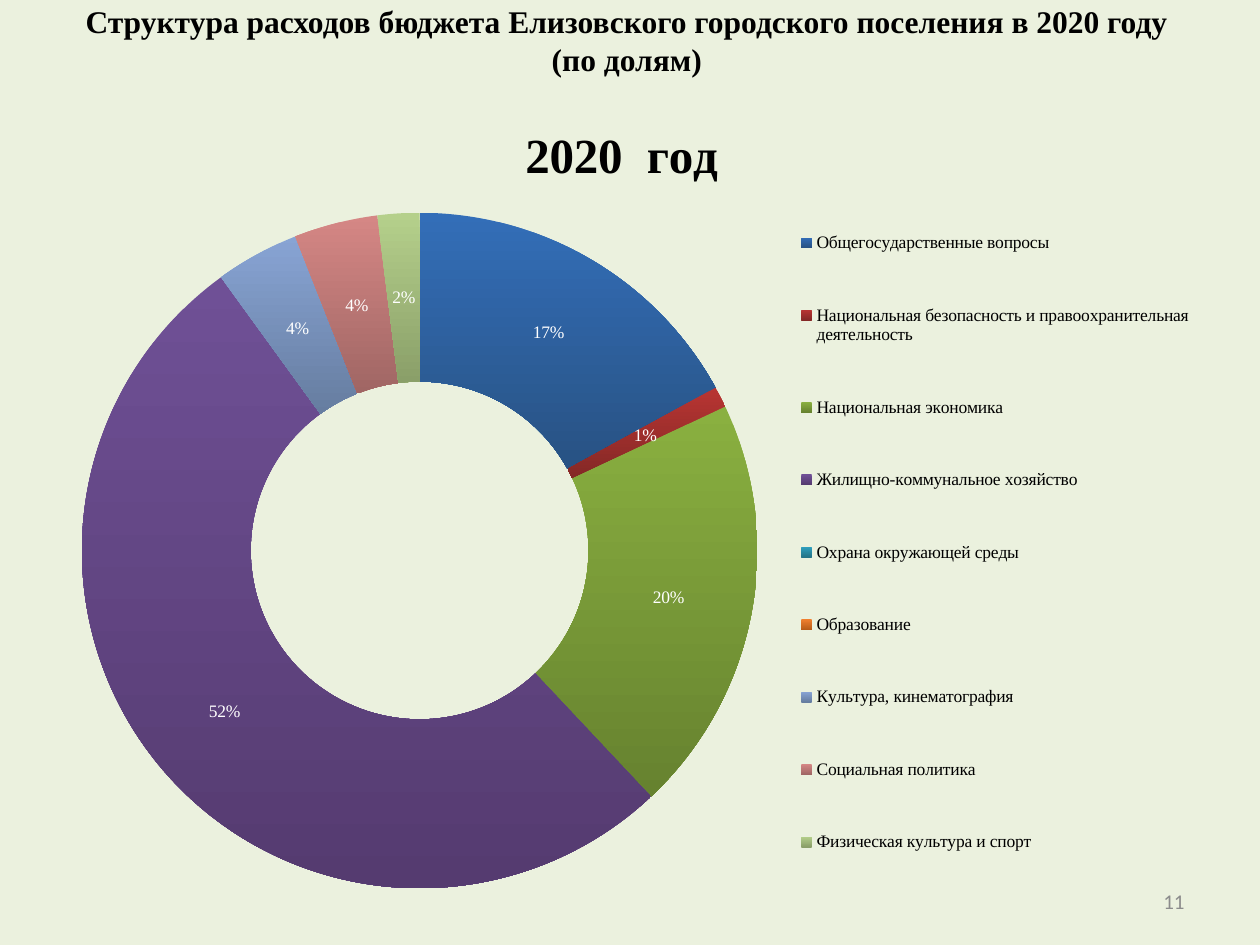
from lxml import etree
from pptx import Presentation
from pptx import util as u
from pptx.chart.data import CategoryChartData
from pptx.dml.color import RGBColor
from pptx.enum import chart as ch, text
from pptx.oxml import ns

BACKGROUND = RGBColor(0xEB, 0xF1, 0xDE)
BLACK = RGBColor(0, 0, 0)
WHITE = RGBColor(255, 255, 255)
GREY = RGBColor(0x8C, 0x8C, 0x8C)
SERIF, SANS = "Times New Roman", "Calibri"

SLIDE_W, SLIDE_H = u.Inches(10), u.Inches(7.5)
YEAR = "2020  год"
EDUCATION = 5  # its label is moved off the neighbouring one

# Budget section, percent of spending, top and bottom colour of its slice
SECTIONS = [
    ("Общегосударственные вопросы", 17, "336EB8", "285283"),
    ("Национальная безопасность и правоохранительная деятельность",
     1, "B83532", "842826"),
    ("Национальная экономика", 20, "8AB040", "66822F"),
    ("Жилищно-коммунальное хозяйство", 52, "6F5096", "553B70"),
    ("Охрана окружающей среды", 0, "2EA0BE", "247487"),
    ("Образование", 0, "F0802F", "B85C18"),
    ("Культура, кинематография", 4, "88A4D4", "667DA0"),
    ("Социальная политика", 4, "D58785", "A06664"),
    ("Физическая культура и спорт", 2, "B5D08B", "8A9F69"),
]


def format_font(font, size, color=BLACK, name=SERIF, bold=False):
    font.size, font.name, font.bold = u.Pt(size), name, bold
    font.color.rgb = color


def write_text(frame, content, align=text.PP_ALIGN.CENTER, **font_format):
    """Fill a text frame; a vertical tab in the content breaks the line."""
    frame.text = content
    frame.word_wrap = True
    frame.auto_size = text.MSO_AUTO_SIZE.NONE
    frame.vertical_anchor = text.MSO_ANCHOR.MIDDLE
    paragraph = frame.paragraphs[0]
    paragraph.alignment = align
    for run in paragraph.runs:
        format_font(run.font, **font_format)


def place_chart_part(part, position, mode="edge", **shares):
    """Lay out a chart part by shares of the chart's size."""
    for old in part.findall(ns.qn("c:layout")):
        part.remove(old)
    layout = etree.Element(ns.qn("c:layout"))
    manual = etree.SubElement(layout, ns.qn("c:manualLayout"))
    if part.tag == ns.qn("c:plotArea"):
        etree.SubElement(manual, ns.qn("c:layoutTarget"), val="inner")
    for axis in "xy":
        etree.SubElement(manual, ns.qn(f"c:{axis}Mode"), val=mode)
    for key, share in shares.items():
        etree.SubElement(manual, ns.qn(f"c:{key}"), val=str(share))
    part.insert(position, layout)


def color_slices(series):
    for index, (_, _, top, bottom) in enumerate(SECTIONS):
        slice_format = series.points[index].format
        slice_format.fill.gradient()
        slice_format.fill.gradient_angle = 270
        for stop, color in zip(slice_format.fill.gradient_stops, (top, bottom)):
            stop.color.rgb = RGBColor.from_string(color)
        slice_format.line.fill.background()


def label_slices(series):
    labels = series.data_labels
    labels.show_percentage = True
    labels.show_value = False
    labels.number_format, labels.number_format_is_linked = "0%", False
    format_font(labels.font, 10, WHITE)

    # Shift the education label down and to the right
    format_font(series.points[EDUCATION].data_label.font, 10, WHITE)
    shifted = labels._element.find(ns.qn("c:dLbl"))
    shifted.find(ns.qn("c:showVal")).set("val", "0")
    shifted.find(ns.qn("c:showPercent")).set("val", "1")
    shifted.insert(1, etree.Element(ns.qn("c:numFmt"), formatCode="0%",
                                    sourceLinked="0"))
    place_chart_part(shifted, 1, mode="factor", x=0.01, y=0.03)


def add_spending_chart(slide):
    data = CategoryChartData()
    data.categories = [section[0] for section in SECTIONS]
    data.add_series(YEAR, [section[1] for section in SECTIONS])
    chart = slide.shapes.add_chart(
        ch.XL_CHART_TYPE.DOUGHNUT, u.Inches(0.16), u.Inches(0.72),
        u.Inches(9.61), u.Inches(6.46), data).chart
    format_font(chart.font, 10)

    # Year heading
    chart.has_title = True
    heading = chart.chart_title
    heading.include_in_layout = False
    write_text(heading.text_frame, YEAR, size=28, bold=True)
    place_chart_part(heading._element, 1, x=0.41, y=0.03)

    # Ring and percentages
    plot = chart.plots[0]
    plot.vary_by_categories = True
    color_slices(plot.series[0])
    label_slices(plot.series[0])
    place_chart_part(chart._chartSpace.chart.plotArea, 0,
                     x=0.05, y=0.15, w=0.56, h=0.83)

    # Legend
    chart.has_legend = True
    chart.legend.position = ch.XL_LEGEND_POSITION.RIGHT
    chart.legend.include_in_layout = False
    format_font(chart.legend.font, 10)
    place_chart_part(chart.legend._element, 1, x=0.63, y=0.11, w=0.35, h=0.89)


def main():
    deck = Presentation()
    deck.slide_width, deck.slide_height = SLIDE_W, SLIDE_H
    slide = deck.slides.add_slide(deck.slide_layouts[5])
    slide.background.fill.solid()
    slide.background.fill.fore_color.rgb = BACKGROUND

    # Title
    title = slide.shapes.title
    title.left, title.top = u.Inches(0.31), u.Inches(0.16)
    title.width, title.height = u.Inches(9.33), u.Inches(0.31)
    write_text(title.text_frame,
               "Структура расходов бюджета Елизовского городского поселения "
               "в 2020 году\v (по долям) ", size=18, bold=True)

    add_spending_chart(slide)

    # Page number
    page_number = slide.shapes.add_textbox(
        u.Inches(7.17), u.Inches(6.95), u.Inches(2.33), u.Inches(0.4))
    write_text(page_number.text_frame, "11", align=text.PP_ALIGN.RIGHT,
               size=12, color=GREY, name=SANS)

    deck.save("out.pptx")


if __name__ == "__main__":
    main()
